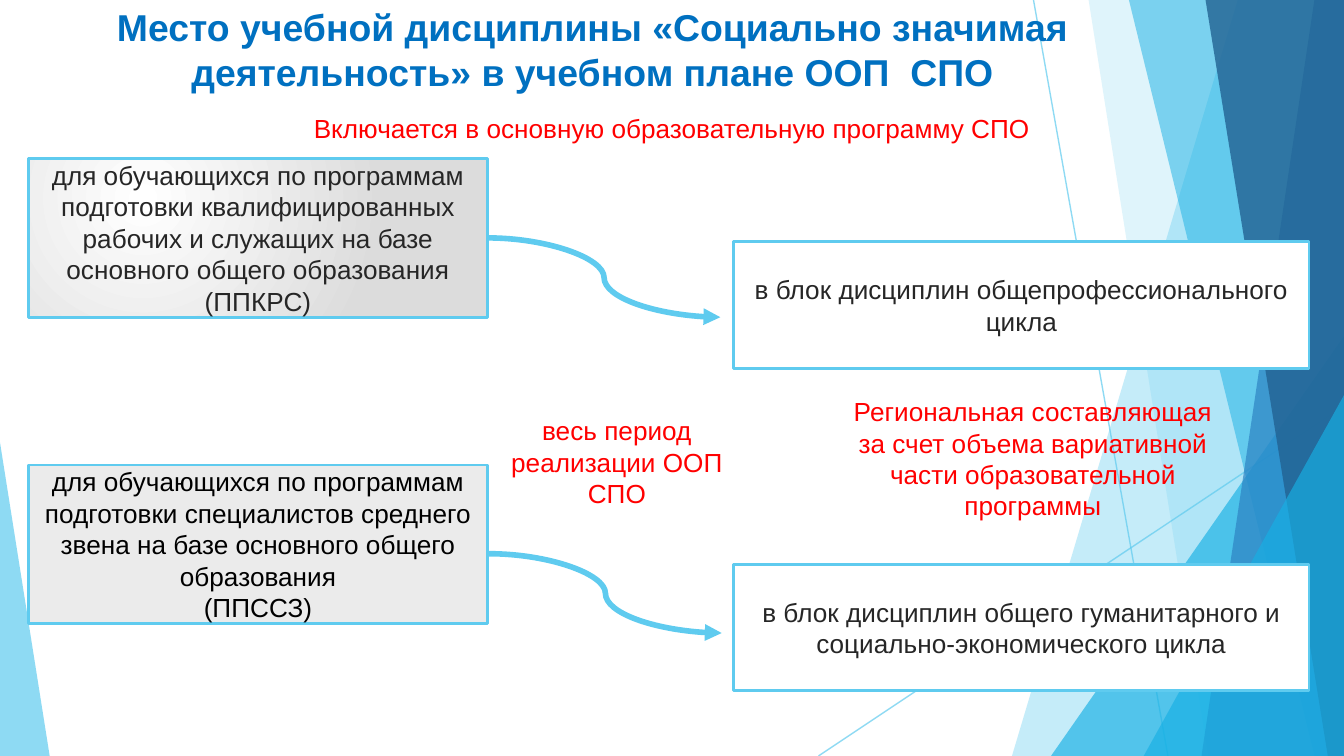
from lxml import etree
from pptx import Presentation, util as u
from pptx.dml.color import RGBColor
from pptx.enum import shapes, text
from pptx.oxml.ns import qn

I = u.Inches
W = 10
H = W * 9 / 16
THEME = {
    "sky": "5FCBEF", "cyan": "17B0E4", "blue": "2E83C3", "navy": "226292",
    "title": "0070C0", "accent": "FF0000", "dark": "262626", "black": "000000",
    "white": "FFFFFF", "grey": "EBEBEB", "shade": "DCDCDC",
    "font": "Arial", "title_size": 20, "text_size": 14,
}


def paint(fill, color, alpha=100):
    """Solid theme colour, with opacity in percent."""
    fill.solid()
    fill.fore_color.rgb = RGBColor.from_string(THEME[color])
    if alpha < 100:
        clr = fill._xPr.find(".//" + qn("a:srgbClr"))
        etree.SubElement(clr, qn("a:alpha"), val=str(alpha * 1000))


def write(sp, words, color, size="text_size", bold=False, margin=0):
    """Centred text, one paragraph per line of words."""
    tf = sp.text_frame
    tf.text = words
    frame = {"word_wrap": True, "auto_size": text.MSO_AUTO_SIZE.NONE,
             "vertical_anchor": text.MSO_ANCHOR.MIDDLE,
             "margin_left": I(margin), "margin_right": I(margin),
             "margin_top": I(margin / 2), "margin_bottom": I(margin / 2)}
    for name, value in frame.items():
        setattr(tf, name, value)
    font = {"name": THEME["font"], "size": u.Pt(THEME[size]), "bold": bold}
    for p in tf.paragraphs:
        p.alignment = text.PP_ALIGN.CENTER
        p.space_before = u.Pt(0)
        for r in p.runs:
            for name, value in font.items():
                setattr(r.font, name, value)
            r.font.color.rgb = RGBColor.from_string(THEME[color])


prs = Presentation()
prs.slide_width, prs.slide_height = I(W), I(H)
s = prs.slides.add_slide(prs.slide_layouts[1])

# Lines: start, end, width, opacity; the curved ones are arrows
CURVE, STRAIGHT = shapes.MSO_CONNECTOR.CURVE, shapes.MSO_CONNECTOR.STRAIGHT
lines = [
    (STRAIGHT, 7.69, 0, 8.69, H, 0.75, 70),
    (STRAIGHT, W, 3.02, 6.09, H, 0.75, 70),
    (CURVE, 3.63, 1.77, 5.36, 2.36, 3, 100),
    (CURVE, 3.64, 4.12, 5.37, 4.71, 3, 100),
]
arrows = []
for kind, x1, y1, x2, y2, width, alpha in lines:
    sp = s.shapes.add_connector(kind, I(x1), I(y1), I(x2), I(y2))
    sp.line.width = u.Pt(width)
    paint(sp.line.fill, "sky", alpha)
    if kind == CURVE:
        etree.SubElement(sp.line._get_or_add_ln(), qn("a:tailEnd"), type="triangle")
        arrows.append(sp)
    etree.SubElement(sp._element.spPr, qn("a:effectLst"))

# Facets: bands give top and bottom left corners and run to the right edge,
# triangles give left, top, width and the place of the apex
facets = [
    ("band", (9.21, 7.53), "sky", 36),
    ("band", (8.1, 8.99), "sky", 20),
    ("triangle", (7.82, 2.5, 2.18, 1), "cyan", 66),
    ("band", (8.4, 9.78), "cyan", 50),
    ("band", (9.78, 8.94), "blue", 70),
    ("band", (8.97, 9.88), "navy", 80),
    ("triangle", (8.51, 2.94, 1.49, 1), "cyan", 66),
    ("triangle", (0, 3.29, 0.37, 0), "sky", 70),
]
for kind, place, color, alpha in facets:
    if kind == "band":
        top, bottom = place
        outline = s.shapes.build_freeform(I(top), I(0))
        outline.add_line_segments([(I(W), I(0)), (I(W), I(H)), (I(bottom), I(H))])
        sp = outline.convert_to_shape()
    else:
        x, y, w, apex = place
        sp = s.shapes.add_shape(shapes.MSO_SHAPE.ISOSCELES_TRIANGLE,
                                I(x), I(y), I(w), I(H - y))
        sp.adjustments[0] = apex
    paint(sp.fill, color, alpha)
    sp.line.fill.background()
    sp.shadow.inherit = False

# Title and subtitle, brought in front of the facets
title, body = s.shapes.title, s.placeholders[1]
for sp, x, y, w, h in [(body, 0, 0.74, W, 0.43), (title, 0, 0.09, 8.82, 0.55)]:
    sp.left, sp.top, sp.width, sp.height = I(x), I(y), I(w), I(h)
    s.shapes._spTree.append(sp._element)
write(title, "Место учебной дисциплины «Социально значимая деятельность» "
             "в учебном плане ООП  СПО", "title", "title_size", True)
write(body, "Включается в основную образовательную программу СПО", "accent")
pPr = body.text_frame.paragraphs[0]._p.get_or_add_pPr()
pPr.set("marL", "0")
pPr.set("indent", "0")
etree.SubElement(pPr, qn("a:buNone"))

# Boxes: programmes on the left, discipline blocks on the right
LEFT, RIGHT = (0.21, 3.42, 1.18), (5.46, 4.28, 0.94)
boxes = [
    (RIGHT, 4.2, "white", "dark",
     "в блок дисциплин общего гуманитарного и социально-экономического цикла"),
    (LEFT, 3.46, "grey", "black",
     "для обучающихся по программам подготовки специалистов среднего звена "
     "на базе основного общего образования\n(ППССЗ)"),
    (LEFT, 1.18, "gradient", "dark",
     "для обучающихся по программам подготовки квалифицированных рабочих "
     "и служащих на базе основного общего образования (ППКРС)"),
    (RIGHT, 1.8, "white", "dark",
     "в блок дисциплин общепрофессионального цикла"),
]
for (x, w, h), y, fill, color, words in boxes:
    sp = s.shapes.add_shape(shapes.MSO_SHAPE.RECTANGLE, I(x), I(y), I(w), I(h))
    sp.shadow.inherit = False
    paint(sp.line.fill, "sky")
    sp.line.width = u.Pt(1.5)
    if fill == "gradient":
        sp.fill.gradient()
        for stop, name in zip(sp.fill.gradient_stops, ("white", "shade")):
            stop.color.rgb = RGBColor.from_string(THEME[name])
        # Radial instead of linear
        grad = sp._element.spPr.find(qn("a:gradFill"))
        grad.remove(grad.find(qn("a:lin")))
        radial = etree.SubElement(grad, qn("a:path"))
        radial.set("path", "circle")
        etree.SubElement(radial, qn("a:fillToRect"),
                         l="50000", t="50000", r="100000", b="100000")
        sp._element.spPr.find(qn("a:xfrm")).set("flipH", "1")
    else:
        paint(sp.fill, fill)
    write(sp, words, color)

# Red remarks
remarks = [
    (3.64, 3.08, 1.9, 0.71, 0, "весь период реализации ООП СПО"),
    (6.21, 2.89, 2.95, 1.04, 0.1, "Региональная составляющая за счет объема "
                                  "вариативной части образовательной программы"),
]
for x, y, w, h, margin, words in remarks:
    sp = s.shapes.add_textbox(I(x), I(y), I(w), I(h))
    write(sp, words, "accent", margin=margin)

# Arrows lie in front of the boxes
for sp in arrows:
    s.shapes._spTree.append(sp._element)

prs.save("out.pptx")
